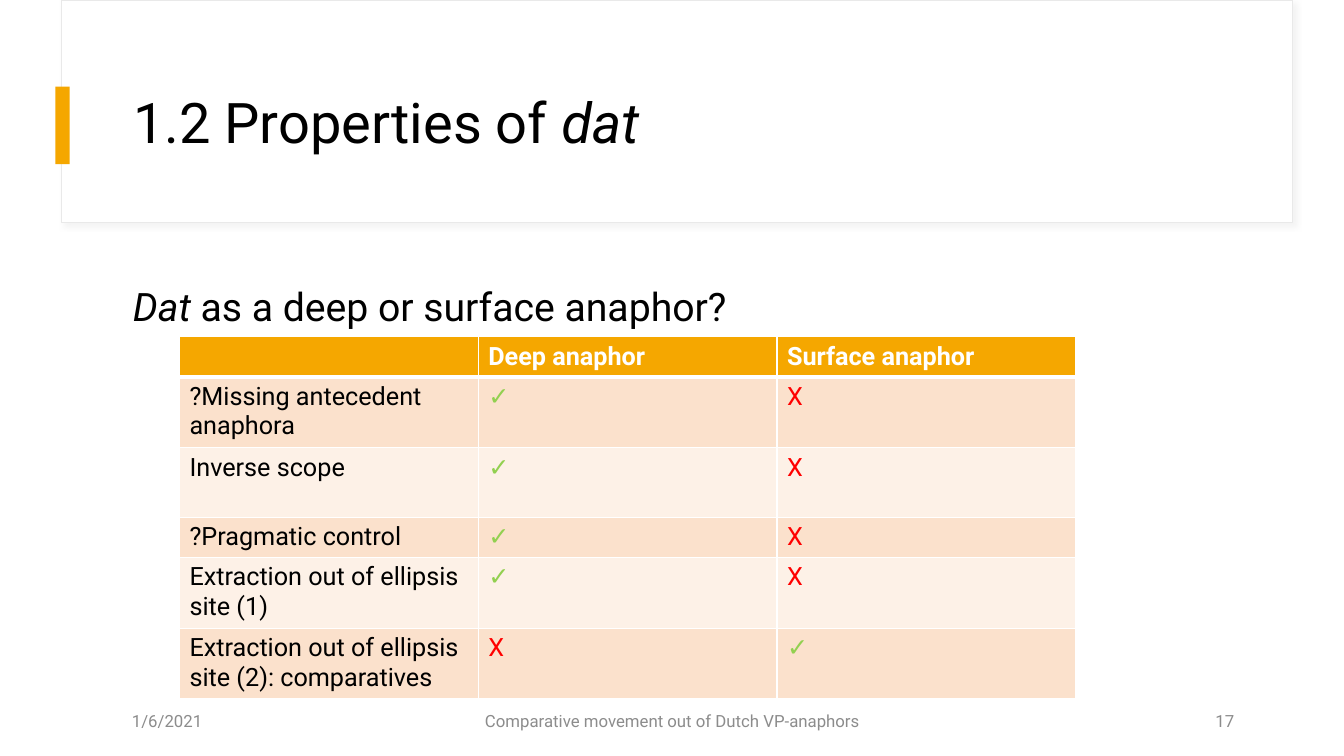
from lxml import etree
from pptx import Presentation
from pptx.dml.color import RGBColor
from pptx.enum import shapes, text
from pptx.oxml import parse_xml
from pptx.oxml.ns import nsdecls, qn
from pptx.util import Inches, Pt

FONT = "Roboto"
ORANGE, WHITE, BLACK, GREY = "F5A700", "FFFFFF", "000000", "8C8C8C"
BANDS = ("FBE1CC", "FDF1E7")
MARK_COLORS = {"✓": "92D050", "X": "FF0000"}
LEFT, CENTER, RIGHT = text.PP_ALIGN.LEFT, text.PP_ALIGN.CENTER, text.PP_ALIGN.RIGHT
TOP, MIDDLE = text.MSO_ANCHOR.TOP, text.MSO_ANCHOR.MIDDLE

HEADINGS = ("", "Deep anaphor", "Surface anaphor")
PROPERTIES = (
    ("?Missing antecedent anaphora", "✓", "X"),
    ("Inverse scope", "✓", "X"),
    ("?Pragmatic control", "✓", "X"),
    ("Extraction out of ellipsis site (1)", "✓", "X"),
    ("Extraction out of ellipsis site (2): comparatives", "X", "✓"),
)
ROW_HEIGHTS = (0.4, 0.69, 0.69, 0.4, 0.69, 0.69)
FOOTER = (
    ("1/6/2021", 1.21, 3, LEFT),
    ("Comparative movement out of Dutch VP-anaphors", 4.42, 4.5, CENTER),
    ("17", 9.34, 3, RIGHT),
)


def color(value):
    return RGBColor.from_string(value)


def write(frame, *runs, size=18, fill=BLACK, bold=False, align=LEFT,
          anchor=TOP, spacing=1.0, before=0):
    frame.word_wrap = True
    frame.vertical_anchor = anchor
    paragraph = frame.paragraphs[0]
    paragraph.alignment = align
    paragraph.line_spacing = spacing
    paragraph.space_before = Pt(before)
    for content, italic in runs:
        run = paragraph.add_run()
        run.text = content
        font = run.font
        font.name, font.size = FONT, Pt(size)
        font.bold, font.italic = bold, italic
        font.color.rgb = color(fill)


def add_rectangle(slide, left, top, width, height, fill, line=None):
    shape = slide.shapes.add_shape(
        shapes.MSO_SHAPE.RECTANGLE, Inches(left), Inches(top), Inches(width), Inches(height))
    shape.shadow.inherit = False
    shape.fill.solid()
    shape.fill.fore_color.rgb = color(fill)
    if line:
        shape.line.color.rgb = color(line)
        shape.line.width = Pt(0.75)
    else:
        shape.line.fill.background()
    return shape


def add_soft_shadow(shape):
    effects = shape.element.spPr.find(qn("a:effectLst"))
    effects.append(parse_xml(
        f'<a:outerShdw {nsdecls("a")} blurRad="{Pt(4)}" dist="{Pt(3)}" dir="2700000">'
        '<a:srgbClr val="D9D9D9"><a:alpha val="30000"/></a:srgbClr></a:outerShdw>'))


def add_text(slide, left, top, width, height, *runs, **style):
    box = slide.shapes.add_textbox(Inches(left), Inches(top), Inches(width), Inches(height))
    write(box.text_frame, *runs, **style)


def add_title(slide, *runs):
    title = slide.shapes.title
    title.element.getparent().append(title.element)
    title.left, title.top = Inches(1.22), Inches(0.6)
    title.width, title.height = Inches(11.12), Inches(1.29)
    write(title.text_frame, *runs, size=40, anchor=MIDDLE, spacing=0.9)


def add_borders(cell, bottom):
    properties = cell._tc.get_or_add_tcPr()
    widths = {"lnL": 1, "lnR": 1, "lnT": 1, "lnB": bottom}
    for position, (side, width) in enumerate(widths.items()):
        line = etree.Element(qn(f"a:{side}"), w=str(Pt(width)))
        fill = etree.SubElement(line, qn("a:solidFill"))
        etree.SubElement(fill, qn("a:srgbClr"), val=WHITE)
        properties.insert(position, line)


def add_property_table(slide):
    rows = (HEADINGS, *PROPERTIES)
    table = slide.shapes.add_table(
        len(rows), len(HEADINGS), Inches(1.78), Inches(3.34),
        Inches(8.89), Inches(sum(ROW_HEIGHTS))).table
    for row, (labels, height) in enumerate(zip(rows, ROW_HEIGHTS)):
        header = row == 0
        table.rows[row].height = Inches(height)
        for column, label in enumerate(labels):
            cell = table.cell(row, column)
            cell.fill.solid()
            cell.fill.fore_color.rgb = color(ORANGE if header else BANDS[(row - 1) % 2])
            add_borders(cell, 3 if header else 1)
            if label:
                fill = WHITE if header else MARK_COLORS.get(label, BLACK)
                write(cell.text_frame, (label, False), fill=fill, bold=header)


def main():
    presentation = Presentation()
    presentation.slide_width, presentation.slide_height = Inches(13.33), Inches(7.5)
    slide = presentation.slides.add_slide(presentation.slide_layouts[5])
    panel = add_rectangle(slide, 0.61, 0, 12.21, 2.21, WHITE, line="E9E9E9")
    add_soft_shadow(panel)
    add_rectangle(slide, 0.55, 0.86, 0.14, 0.77, ORANGE)
    add_title(slide, ("1.2 Properties of ", False), ("dat", True))
    add_text(slide, 1.22, 2.71, 11.12, 4.04, ("Dat ", True),
             ("as a deep or surface anaphor?", False), size=28, spacing=1.1, before=10)
    for label, left, width, align in FOOTER:
        add_text(slide, left, 6.95, width, 0.4, (label, False),
                 size=12, fill=GREY, align=align, anchor=MIDDLE)
    add_property_table(slide)
    presentation.save("out.pptx")


if __name__ == "__main__":
    main()
